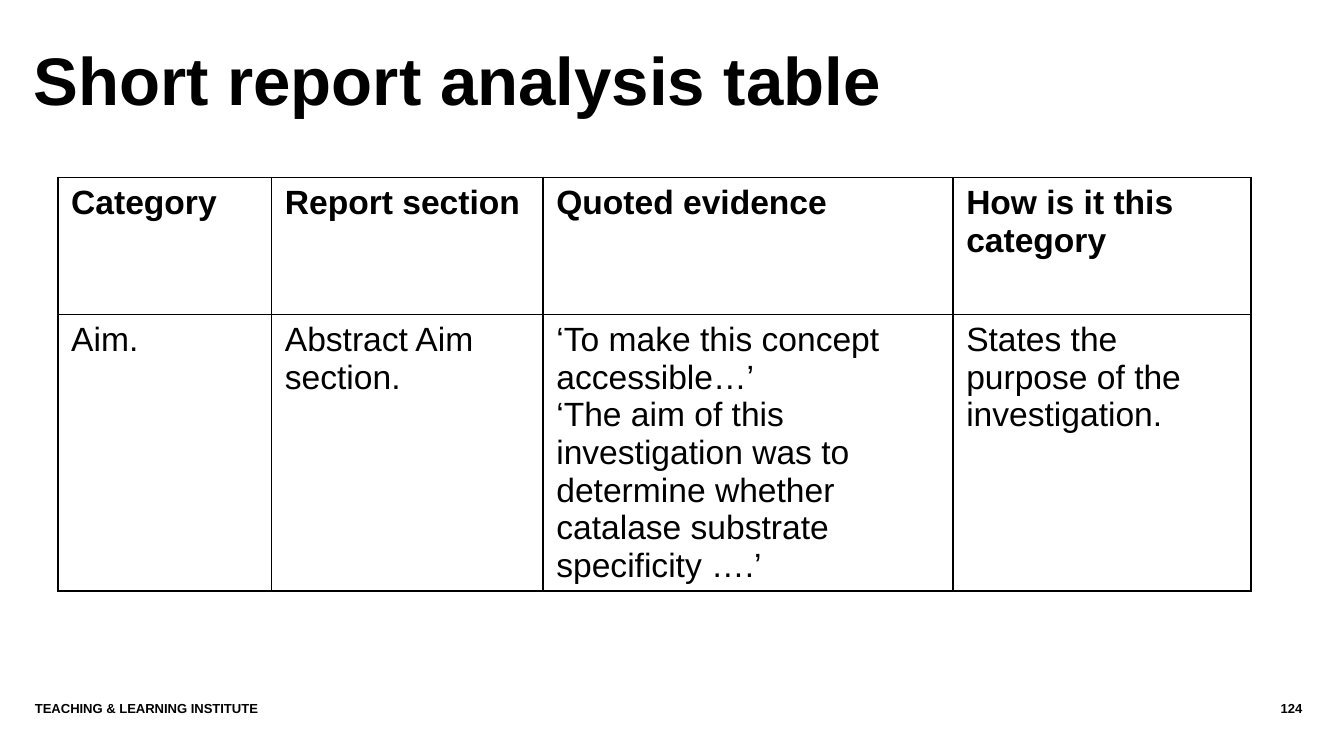
"""Build the short report analysis table slide."""
from lxml import etree
from pptx import Presentation
from pptx.dml.color import RGBColor
from pptx.enum import text
from pptx.oxml import ns
from pptx.util import Inches, Pt

COLORS = {"ink": "000000", "paper": "FFFFFF"}
FONT = "Arial"
SLIDE_WIDTH = 10
SLIDE_HEIGHT = SLIDE_WIDTH * 9 / 16
TITLE = "Short report analysis table"
FOOTERS = [
    ("TEACHING & LEARNING INSTITUTE", 0.26, 8.41, text.PP_ALIGN.LEFT),
    ("124", 8.7, 0.99, text.PP_ALIGN.RIGHT),
]
COLUMN_WIDTHS = [1.59, 2.02, 3.05, 2.22]
ROW_HEIGHTS = [1.02, 2.06]
ROWS = [
    ["Category", "Report section", "Quoted evidence", "How is it this category"],
    [
        "Aim.",
        "Abstract Aim section.",
        "‘To make this concept accessible…’\n"
        "‘The aim of this investigation was to determine whether "
        "catalase substrate specificity ….’",
        "States the purpose of the investigation.",
    ],
]


def write(frame, content, size, bold=True, align=text.PP_ALIGN.LEFT):
    frame.text = content
    frame.word_wrap = True
    for paragraph in frame.paragraphs:
        paragraph.alignment = align
        for span in paragraph.runs:
            span.font.name = FONT
            span.font.size = Pt(size)
            span.font.bold = bold
            span.font.color.rgb = RGBColor.from_string(COLORS["ink"])


def clear_margins(frame):
    frame.margin_left = frame.margin_right = 0
    frame.margin_top = frame.margin_bottom = 0


def add_borders(cell):
    properties = cell._tc.get_or_add_tcPr()
    for position, side in enumerate(["lnL", "lnR", "lnT", "lnB"]):
        line = etree.Element(ns.qn(f"a:{side}"), w=str(Pt(1)))
        fill = etree.SubElement(line, ns.qn("a:solidFill"))
        etree.SubElement(fill, ns.qn("a:srgbClr"), val=COLORS["ink"])
        properties.insert(position, line)


def add_title(page):
    title = page.shapes.title
    title.left, title.top = Inches(0.25), Inches(0.27)
    title.width, title.height = Inches(9.23), Inches(0.76)
    frame = title.text_frame
    clear_margins(frame)
    frame.auto_size = text.MSO_AUTO_SIZE.NONE
    frame.vertical_anchor = text.MSO_ANCHOR.MIDDLE
    write(frame, TITLE, 36)
    frame.paragraphs[0].line_spacing = 0.75


def add_analysis_table(page):
    table = page.shapes.add_table(
        len(ROWS), len(COLUMN_WIDTHS), Inches(0.43), Inches(1.32),
        Inches(sum(COLUMN_WIDTHS)), Inches(sum(ROW_HEIGHTS)),
    ).table
    for column, width in zip(table.columns, COLUMN_WIDTHS):
        column.width = Inches(width)
    for row, height in zip(table.rows, ROW_HEIGHTS):
        row.height = Inches(height)
    for row_index, entries in enumerate(ROWS):
        for column_index, entry in enumerate(entries):
            cell = table.cell(row_index, column_index)
            cell.fill.solid()
            cell.fill.fore_color.rgb = RGBColor.from_string(COLORS["paper"])
            add_borders(cell)
            write(cell.text_frame, entry, 18, bold=row_index == 0)


def add_footers(page):
    for content, left, width, align in FOOTERS:
        box = page.shapes.add_textbox(
            Inches(left), Inches(5.21), Inches(width), Inches(0.3))
        clear_margins(box.text_frame)
        write(box.text_frame, content, 7, align=align)


def main():
    deck = Presentation()
    deck.slide_width = Inches(SLIDE_WIDTH)
    deck.slide_height = Inches(SLIDE_HEIGHT)
    page = deck.slides.add_slide(deck.slide_layouts[5])
    add_title(page)
    add_analysis_table(page)
    add_footers(page)
    deck.save("out.pptx")


if __name__ == "__main__":
    main()
